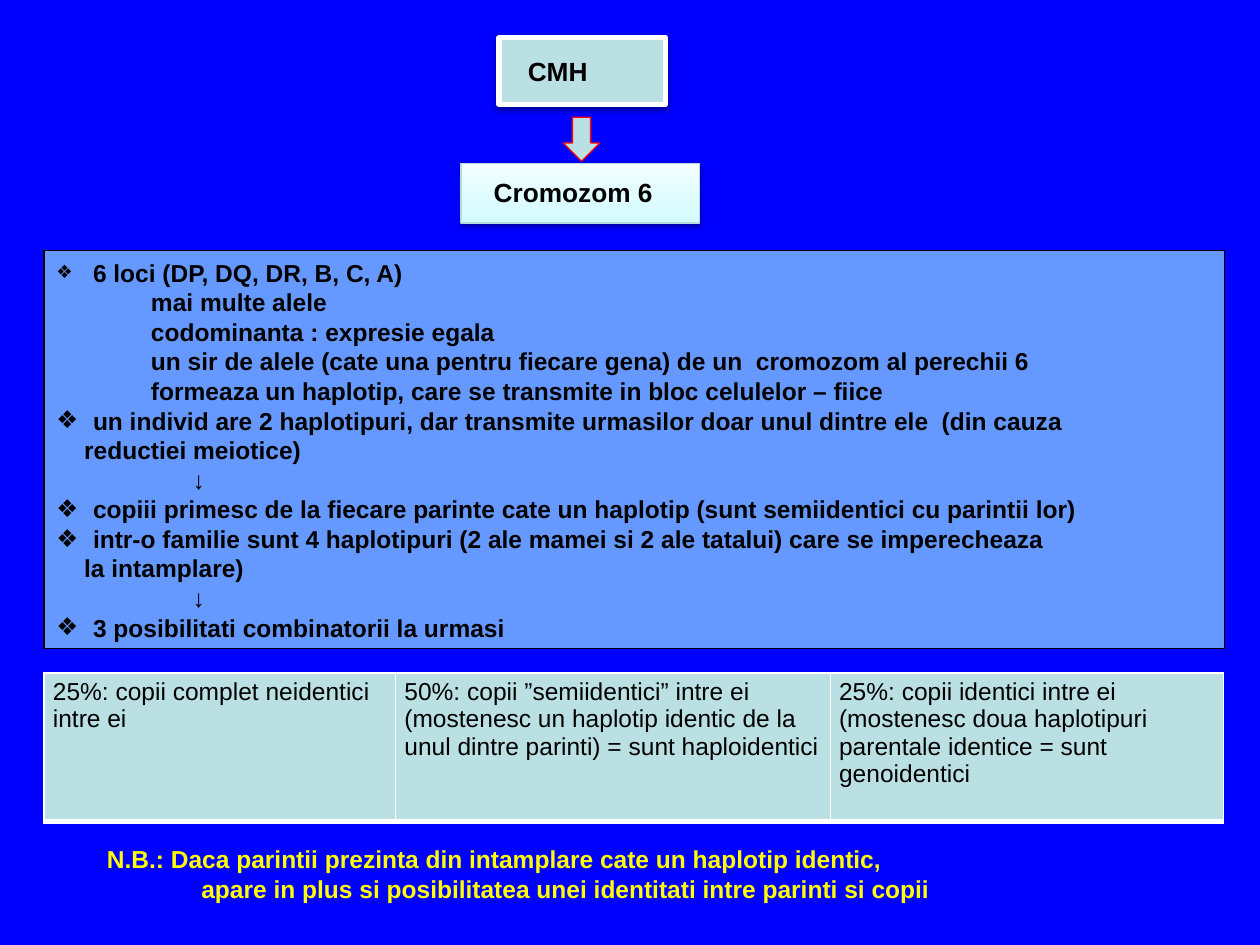
from dataclasses import dataclass

from lxml import etree
from pptx import Presentation
from pptx.dml.color import RGBColor
from pptx.enum.shapes import MSO_SHAPE
from pptx.enum.text import MSO_ANCHOR
from pptx.oxml.ns import qn
from pptx.util import Inches, Pt

RECT, DOWN = MSO_SHAPE.RECTANGLE, MSO_SHAPE.DOWN_ARROW
TOP, MIDDLE = MSO_ANCHOR.TOP, MSO_ANCHOR.MIDDLE


@dataclass(frozen=True)
class Theme:
    font: str = "Arial"
    back: str = "0000FF"
    panel: str = "6699FF"
    teal: str = "BBE0E3"
    edge: str = "B6DCDF"
    pale: str = "F2FEFF"
    ice: str = "D3FBFF"
    ink: str = "000000"
    white: str = "FFFFFF"
    red: str = "FF0000"
    note: str = "FFFF00"
    head: float = 15
    body: float = 14
    lead: float = 16.9


@dataclass(frozen=True)
class Box:
    left: float
    top: float
    width: float
    height: float

    def place(self) -> tuple:
        return tuple(map(Inches, (self.left, self.top, self.width, self.height)))


@dataclass(frozen=True)
class Line:
    text: str
    indent: float = 0
    bullet: int = 0  # bullet size in percent, 0 for none


THEME = Theme()
BULLET, SUB, WRAP, ARROW = 0.29, 0.75, 0.22, 1.08  # text indents

LOCI = [
    Line("6 loci (DP, DQ, DR, B, C, A)", BULLET, 75),
    Line("mai multe alele", SUB),
    Line("codominanta : expresie egala", SUB),
    Line("un sir de alele (cate una pentru fiecare gena) de un  cromozom al perechii 6", SUB),
    Line("formeaza un haplotip, care se transmite in bloc celulelor – fiice", SUB),
    Line("un individ are 2 haplotipuri, dar transmite urmasilor doar unul dintre ele  (din cauza",
         BULLET, 100),
    Line("reductiei meiotice)", WRAP),
    Line("↓", ARROW),
    Line("copiii primesc de la fiecare parinte cate un haplotip (sunt semiidentici cu parintii lor)",
         BULLET, 100),
    Line("intr-o familie sunt 4 haplotipuri (2 ale mamei si 2 ale tatalui) care se imperecheaza",
         BULLET, 100),
    Line("la intamplare)", WRAP),
    Line("↓", ARROW),
    Line("3 posibilitati combinatorii la urmasi", BULLET, 100),
]
NOTE = [
    Line("N.B.: Daca parintii prezinta din intamplare cate un haplotip identic,"),
    Line("apare in plus si posibilitatea unei identitati intre parinti si copii", SUB),
]
CASES = [
    (2.79, "25%: copii complet neidentici intre ei"),
    (3.45, "50%: copii ”semiidentici” intre ei (mostenesc un haplotip identic de la "
           "unul dintre parinti) = sunt haploidentici"),
    (3.12, "25%: copii identici intre ei (mostenesc doua haplotipuri parentale "
           "identice = sunt genoidentici"),
]


def color(code: str) -> RGBColor:
    return RGBColor.from_string(code)


def add(parent, tag: str, **attrs):
    return etree.SubElement(parent, qn(tag), {k: str(v) for k, v in attrs.items()})


def write(frame, lines: list[Line], *, size=THEME.body, ink=THEME.ink, bold=True,
          lead=None, anchor=TOP) -> None:
    frame.word_wrap = True
    frame.vertical_anchor = anchor
    for i, line in enumerate(lines):
        para = frame.add_paragraph() if i else frame.paragraphs[0]
        if lead:
            para.line_spacing = Pt(lead)
        run = para.add_run()
        run.text = line.text
        font = run.font
        font.name, font.size, font.bold = THEME.font, Pt(size), bold
        font.color.rgb = color(ink)
        props = para._p.get_or_add_pPr()
        props.set("algn", "l")
        props.set("marL", str(Inches(line.indent)))
        props.set("indent", str(-Inches(line.indent) if line.bullet else 0))
        if line.bullet:
            add(props, "a:buSzPct", val=line.bullet * 1000)
            add(props, "a:buFont", typeface=THEME.font)
            add(props, "a:buChar", char="❖")
        else:
            add(props, "a:buNone")


def label(slide, box: Box, lines: list[Line], **fmt) -> None:
    write(slide.shapes.add_textbox(*box.place()).text_frame, lines, **fmt)


def block(slide, box: Box, fill: str, edge: str, width: float = 0.75, kind=RECT):
    shape = slide.shapes.add_shape(kind, *box.place())
    shape.shadow.inherit = False
    shape.fill.solid()
    shape.fill.fore_color.rgb = color(fill)
    shape.line.color.rgb = color(edge)
    shape.line.width = Pt(width)
    return shape


def shade(shape) -> None:
    effects = shape._element.spPr.find(qn("a:effectLst"))
    outer = add(effects, "a:outerShdw", blurRad=Pt(3.1), dist=Pt(1.6),
                dir=5400000, rotWithShape=0)
    add(add(outer, "a:srgbClr", val=THEME.ink), "a:alpha", val=38000)


def border(cell, sides: dict[str, float]) -> None:
    props = cell._tc.get_or_add_tcPr()
    for i, (side, width) in enumerate(sides.items()):
        line = add(props, f"a:ln{side}", w=Pt(width))
        add(add(line, "a:solidFill"), "a:srgbClr", val=THEME.white)
        props.insert(i, line)


def grid(slide, box: Box, cases: list[tuple[float, str]]) -> None:
    table = slide.shapes.add_table(1, len(cases), *box.place()).table
    table.first_row = table.horz_banding = False
    for i, (width, text) in enumerate(cases):
        table.columns[i].width = Inches(width)
        cell = table.cell(0, i)
        cell.margin_left = cell.margin_right = Inches(0.07)
        cell.margin_top = cell.margin_bottom = Inches(0.04)
        cell.fill.solid()
        cell.fill.fore_color.rgb = color(THEME.teal)
        border(cell, {"L": 1, "R": 1, "T": 1, "B": 3})
        write(cell.text_frame, [Line(text)], bold=False)


def main() -> None:
    deck = Presentation()
    deck.slide_width, deck.slide_height = Inches(10), Inches(7.5)
    slide = deck.slides.add_slide(deck.slide_layouts[6])
    slide.background.fill.solid()
    slide.background.fill.fore_color.rgb = color(THEME.back)

    # Heading boxes, with an arrow from one to the other
    chrome = block(slide, Box(3.66, 1.3, 1.89, 0.47), THEME.ice, THEME.edge)
    chrome.fill.gradient()
    chrome.fill.gradient_angle = 90
    for stop, code in zip(chrome.fill.gradient_stops, (THEME.ice, THEME.pale)):
        stop.color.rgb = color(code)
    shade(chrome)
    shade(block(slide, Box(3.96, 0.3, 1.32, 0.53), THEME.teal, THEME.white, 3))
    label(slide, Box(4.09, 0.39, 0.91, 0.35), [Line("CMH")], size=THEME.head)
    label(slide, Box(3.82, 1.35, 1.89, 0.35), [Line("Cromozom 6")], size=THEME.head)

    # Panel of facts
    panel = block(slide, Box(0.35, 1.99, 9.37, 3.16), THEME.panel, THEME.ink)
    write(panel.text_frame, LOCI, lead=THEME.lead, anchor=MIDDLE)

    # Table of cases
    grid(slide, Box(0.35, 5.34, 9.36, 1.18), CASES)

    # Arrow and closing note
    block(slide, Box(4.47, 0.93, 0.29, 0.35), THEME.teal, THEME.red, kind=DOWN)
    label(slide, Box(0.75, 6.65, 8.67, 0.57), NOTE, ink=THEME.note, lead=THEME.lead)

    deck.save("out.pptx")


if __name__ == "__main__":
    main()
